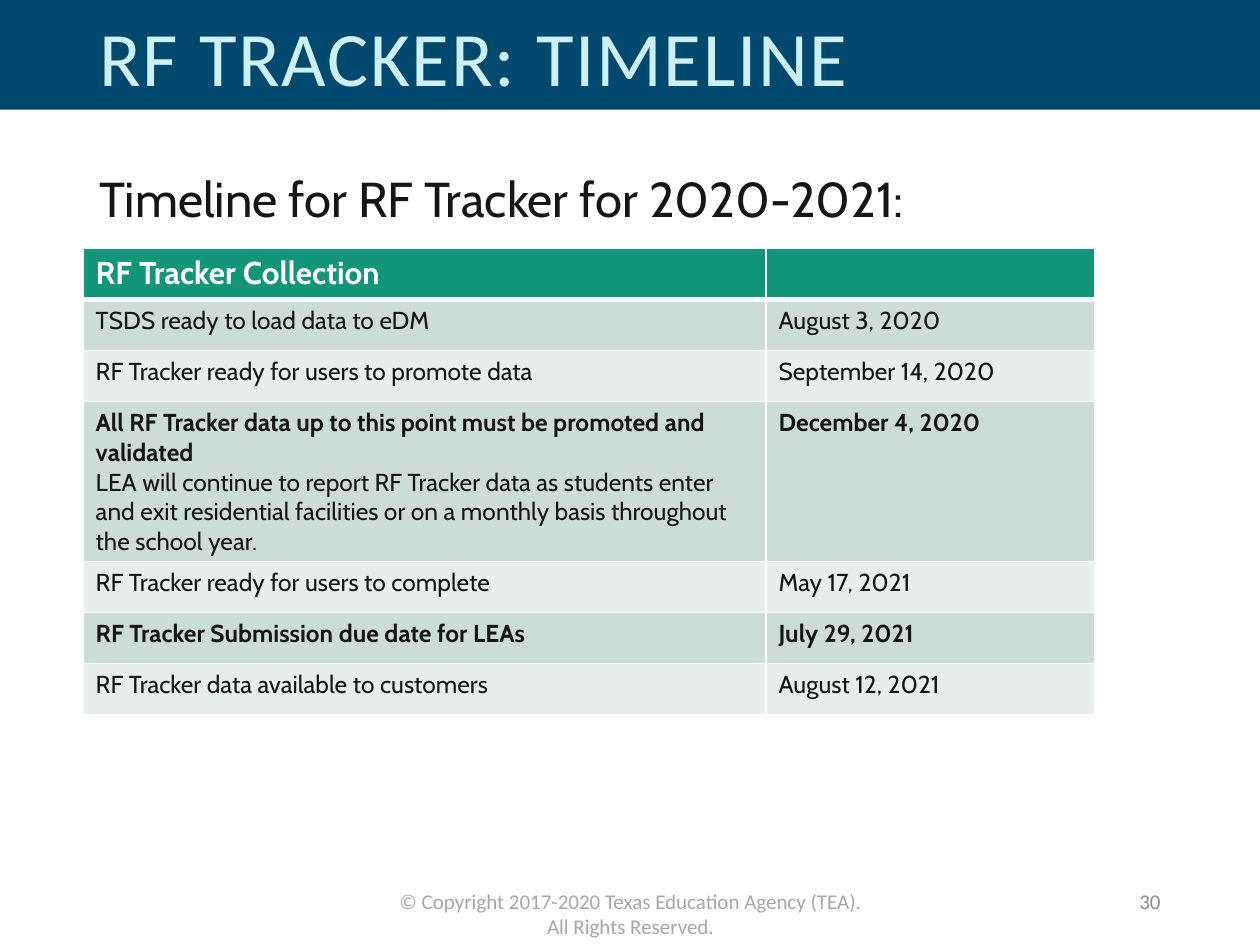
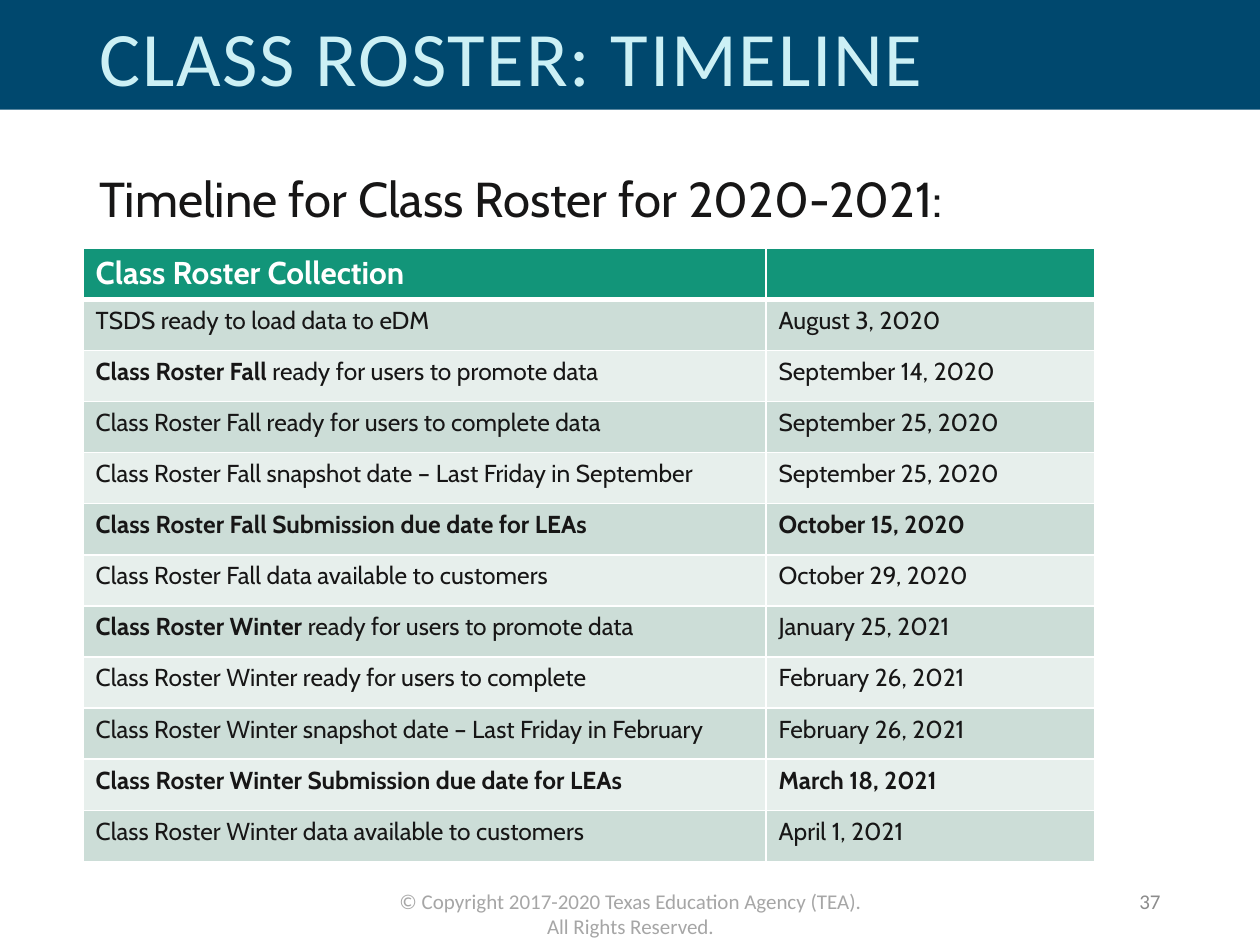
from dataclasses import dataclass

from lxml import etree
from pptx import Presentation
from pptx.dml.color import RGBColor
from pptx.enum.shapes import MSO_SHAPE
from pptx.enum.text import MSO_ANCHOR, MSO_AUTO_SIZE, PP_ALIGN
from pptx.oxml.ns import qn
from pptx.util import Inches, Pt

RECTANGLE = MSO_SHAPE.RECTANGLE
TOP, MIDDLE = MSO_ANCHOR.TOP, MSO_ANCHOR.MIDDLE
LEFT, CENTER, RIGHT = PP_ALIGN.LEFT, PP_ALIGN.CENTER, PP_ALIGN.RIGHT
GROW, FIXED = MSO_AUTO_SIZE.SHAPE_TO_FIT_TEXT, MSO_AUTO_SIZE.NONE


@dataclass(frozen=True)
class Theme:
    band: str = "00486E"
    header: str = "129579"
    stripes: tuple = ("CCDDD7", "E7EFEC")
    rule: str = "FFFFFF"
    title: tuple = ("Calibri", 44, "CCF0F5")
    heading: tuple = ("Cabin", 28, "171616")
    table_head: tuple = ("Cabin", 18, "FFFFFF")
    table_body: tuple = ("Cabin", 14, "171616")
    footer: tuple = ("Calibri", 12, "A6A6A6")
    number: tuple = ("Calibri", 12, "8C8C8C")


theme = Theme()
deck = Presentation()
deck.slide_width, deck.slide_height = Inches(10), Inches(7.5)
PERCENT_X, PERCENT_Y = deck.slide_width / 100, deck.slide_height / 100

# Places are left, top, width, height in percent of the slide.
BAND = (0, 0, 100, 11.6)
TABLE_LEFT, TABLE_TOP = 6.6, 26.27
COLUMN_WIDTHS = (54.2, 26.1)
ROW_HEIGHT, TALL_ROW_HEIGHT = 5.41, 16.93
COPYRIGHT = "© Copyright 2017-2020 Texas Education Agency (TEA). All Rights Reserved."

# Text between asterisks is bold.
timelines = [
    {
        "name": "RF Tracker",
        "page": "30",
        "rows": [
            ("TSDS ready to load data to eDM", "August 3, 2020"),
            ("RF Tracker ready for users to promote data", "September 14, 2020"),
            ("*All RF Tracker data up to this point must be promoted and validated*\n"
             "LEA will continue to report RF Tracker data as students enter and exit "
             "residential facilities or on a monthly basis throughout the school year.",
             "*December 4, 2020*"),
            ("RF Tracker ready for users to complete", "May 17, 2021"),
            ("*RF Tracker Submission due date for LEAs*", "*July 29, 2021*"),
            ("RF Tracker data available to customers", "August 12, 2021"),
        ],
    },
    {
        "name": "Class Roster",
        "page": "37",
        "rows": [
            ("TSDS ready to load data to eDM", "August 3, 2020"),
            ("*Class Roster Fall *ready for users to promote data", "September 14, 2020"),
            ("Class Roster Fall ready for users to complete data", "September 25, 2020"),
            ("Class Roster Fall snapshot date – Last Friday in September",
             "September 25, 2020"),
            ("*Class Roster Fall Submission due date for LEAs*", "*October 15, 2020*"),
            ("Class Roster Fall data available to customers", "October 29, 2020"),
            ("*Class Roster Winter *ready for users to promote data", "January 25, 2021"),
            ("Class Roster Winter ready for users to complete", "February 26, 2021"),
            ("Class Roster Winter snapshot date – Last Friday in February",
             "February 26, 2021"),
            ("*Class Roster Winter Submission due date for LEAs*", "*March 18, 2021*"),
            ("Class Roster Winter data available to customers", "April 1, 2021"),
        ],
    },
]


def place(left, top, width, height):
    """Turn percentages of the slide into lengths."""
    return (round(left * PERCENT_X), round(top * PERCENT_Y),
            round(width * PERCENT_X), round(height * PERCENT_Y))


def write(frame, text, style, **paragraph_format):
    """Fill a text frame, one paragraph a line, with *bold* parts."""
    face, size, color = style
    for index, line in enumerate(text.split("\n")):
        para = frame.add_paragraph() if index else frame.paragraphs[0]
        for name, value in paragraph_format.items():
            setattr(para, name, value)
        for part, words in enumerate(line.split("*")):
            if words:
                span = para.add_run()
                span.text = words
                look = {"name": face, "size": Pt(size), "bold": part % 2 == 1}
                for name, value in look.items():
                    setattr(span.font, name, value)
                span.font.color.rgb = RGBColor.from_string(color)


for timeline in timelines:
    name, rows = timeline["name"], timeline["rows"]
    page = deck.slides.add_slide(deck.slide_layouts[6])

    band = page.shapes.add_shape(RECTANGLE, *place(*BAND))
    band.shadow.inherit = False
    band.fill.solid()
    band.fill.fore_color.rgb = RGBColor.from_string(theme.band)
    band.line.fill.background()

    texts = [
        (COPYRIGHT, (30.4, 93.33, 39.3, 4), theme.footer, TOP, GROW, CENTER, 1.0),
        (f"{name.upper()}: TIMELINE", (6.9, 0.67, 80, 11.6),
         theme.title, MIDDLE, FIXED, LEFT, 0.9),
        (f"Timeline for {name} for 2020-2021:", (6.9, 17.87, 86.2, 72.27),
         theme.heading, TOP, FIXED, LEFT, 0.9),
        (timeline["page"], (70.6, 92.67, 22.5, 5.33),
         theme.number, MIDDLE, FIXED, RIGHT, 1.0),
    ]
    for text, area, style, anchor, sizing, alignment, spacing in texts:
        box = page.shapes.add_textbox(*place(*area))
        layout = {"word_wrap": True, "auto_size": sizing, "vertical_anchor": anchor}
        for key, value in layout.items():
            setattr(box.text_frame, key, value)
        write(box.text_frame, text, style, alignment=alignment, line_spacing=spacing)
        if style is theme.title:
            span = box.text_frame.paragraphs[0].runs[0]
            span.font._element.set("spc", "100")

    heights = [ROW_HEIGHT] + [TALL_ROW_HEIGHT if "\n" in event else ROW_HEIGHT
                              for event, date in rows]
    area = place(TABLE_LEFT, TABLE_TOP, sum(COLUMN_WIDTHS), sum(heights))
    table = page.shapes.add_table(len(heights), len(COLUMN_WIDTHS), *area).table
    table.horz_banding = False
    for column, width in zip(table.columns, COLUMN_WIDTHS):
        column.width = round(width * PERCENT_X)

    lines = [(f"*{name} Collection*", "")] + rows
    for row, (height, line) in enumerate(zip(heights, lines)):
        table.rows[row].height = round(height * PERCENT_Y)
        fill = theme.stripes[(row - 1) % 2] if row else theme.header
        style = theme.table_body if row else theme.table_head
        for column, text in enumerate(line):
            cell = table.cell(row, column)
            write(cell.text_frame, text, style)
            properties = cell._tc.get_or_add_tcPr()
            for side in "LRTB":
                heavy = (row, side) in ((0, "B"), (1, "T"))
                border = etree.SubElement(properties, qn(f"a:ln{side}"),
                                          w=str(Pt(3 if heavy else 1)))
                paint = etree.SubElement(border, qn("a:solidFill"))
                etree.SubElement(paint, qn("a:srgbClr"), val=theme.rule)
            cell.fill.solid()
            cell.fill.fore_color.rgb = RGBColor.from_string(fill)

deck.save("out.pptx")
